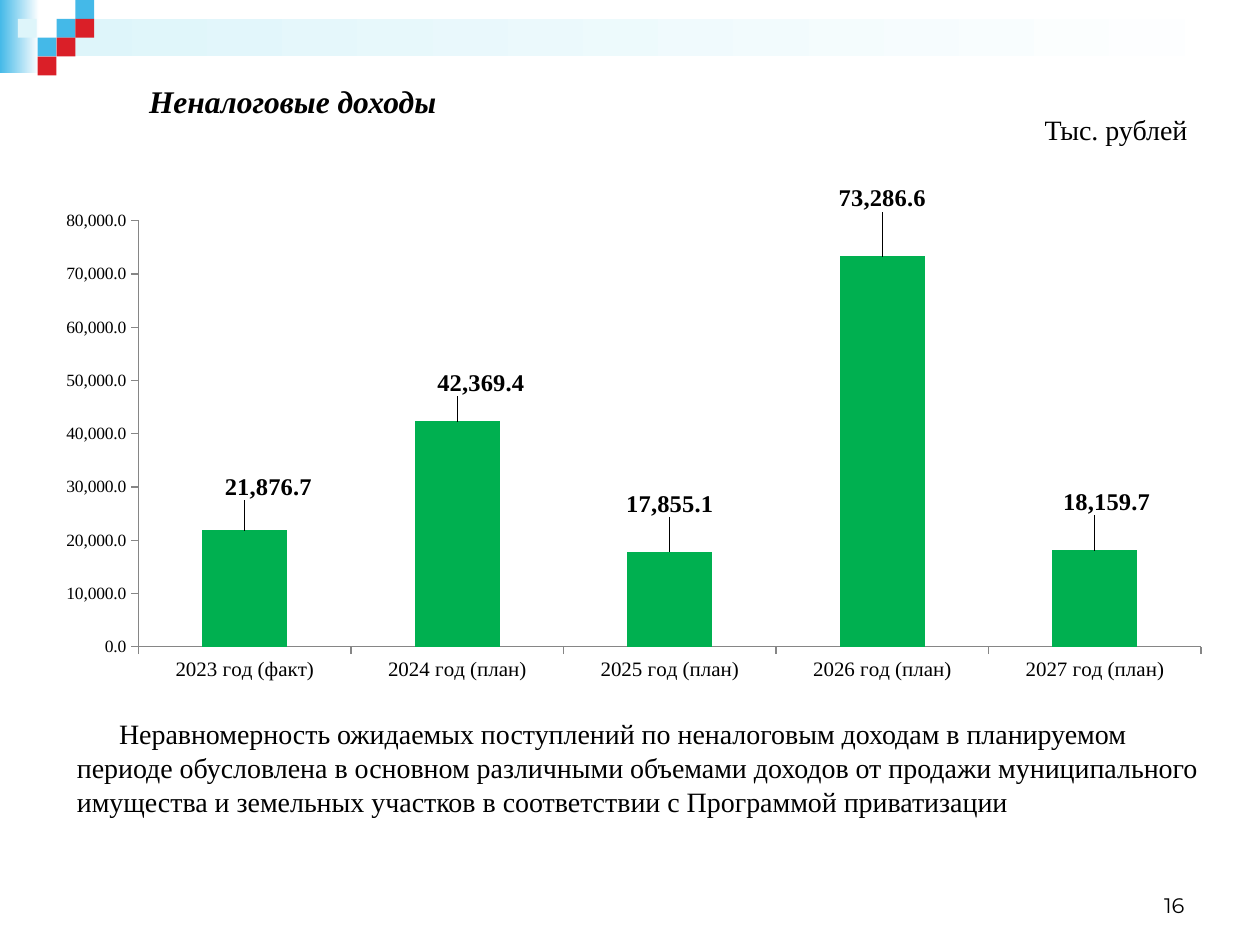
from lxml import etree
from pptx import Presentation
from pptx.chart.data import CategoryChartData
from pptx.dml.color import RGBColor
from pptx.enum.chart import XL_CHART_TYPE as CT, XL_LABEL_POSITION as LP, XL_TICK_MARK as TM
from pptx.enum.shapes import MSO_SHAPE
from pptx.enum.text import MSO_ANCHOR as MA, PP_ALIGN as AL
from pptx.oxml.ns import qn
from pptx.util import Cm, Pt

SERIF = "Times New Roman"
BLUE, RED, PALE, GREEN = "44B9E8", "DA1F28", "DEF5FA", "00B050"


def rgb(value):
    return RGBColor.from_string(value)


def write(sp, text, box, size=16, font=SERIF, bold=False, italic=False,
          align=AL.LEFT, anchor=MA.TOP, indent=None):
    sp.left, sp.top, sp.width, sp.height = [Cm(v) for v in box]
    tf = sp.text_frame
    tf.word_wrap = True
    tf.vertical_anchor = anchor
    p = tf.paragraphs[0]
    p.alignment = align
    if indent:
        p._p.get_or_add_pPr().set("indent", str(Cm(indent)))
    r = p.add_run()
    r.text = text
    f = r.font
    f.size, f.name, f.bold, f.italic = Pt(size), font, bold, italic
    f.color.rgb = rgb("000000")


prs = Presentation()
prs.slide_width, prs.slide_height = Cm(25.4), Cm(19.05)
s = prs.slides.add_slide(prs.slide_layouts[5])

# Header bands (gradient) and mosaic squares
u = 0.38
rects = [
    (0, 0, 0.79, 1.47, (BLUE, "FFFFFF")),
    (3 * u, u, 24.26, 2 * u, (PALE, "FFFFFF")),
]
squares = [(3, 1, BLUE), (4, 0, BLUE), (4, 1, RED), (2, 2, BLUE),
           (0.95, 1, PALE), (3, 2, RED), (2, 3, RED)]
rects += [(col * u, row * u, u, u, (color,)) for col, row, color in squares]
for x, y, w, h, colors in rects:
    sp = s.shapes.add_shape(MSO_SHAPE.RECTANGLE, Cm(x), Cm(y), Cm(w), Cm(h))
    sp.shadow.inherit = False
    sp.line.fill.background()
    if len(colors) == 1:
        sp.fill.solid()
        sp.fill.fore_color.rgb = rgb(colors[0])
    else:
        sp.fill.gradient()
        sp.fill.gradient_angle = 0
        for stop, color in zip(sp.fill.gradient_stops, colors):
            stop.color.rgb = rgb(color)

# Title and unit
write(s.shapes.title, "Неналоговые доходы", (0.5, 1.53, 10.8, 1.03),
      size=18, bold=True, italic=True, align=AL.CENTER)
write(s.shapes.add_textbox(0, 0, 0, 0), "Тыс. рублей", (20.3, 2.14, 4.4, 0.94),
      align=AL.CENTER)

# Column chart
data = CategoryChartData(number_format="#,##0.0")
data.categories = ["2023 год (факт)"] + [f"{year} год (план)" for year in range(2024, 2028)]
data.add_series("Неналоговые доходы", (21876.7, 42369.4, 17855.1, 73286.6, 18159.7))
chart = s.shapes.add_chart(CT.COLUMN_CLUSTERED, Cm(0.89), Cm(3.73), Cm(23.8),
                           Cm(10.21), data).chart
chart.has_legend = chart.has_title = False
chart.font.size, chart.font.name = Pt(10), SERIF
chart.font.color.rgb = rgb("000000")

for axis, size in ((chart.category_axis, 12), (chart.value_axis, 10)):
    axis.major_tick_mark, axis.minor_tick_mark = TM.OUTSIDE, TM.NONE
    axis.tick_labels.font.size = Pt(size)
    axis.tick_labels.font.name = SERIF
    axis.format.line.color.rgb = rgb("868686")
    axis.format.line.width = Pt(0.75)
va = chart.value_axis
va.minimum_scale, va.maximum_scale, va.major_unit = 0, 80000, 10000
va.tick_labels.number_format = "#,##0.0"
va.tick_labels.number_format_is_linked = False
va.major_gridlines.format.line.color.rgb = rgb("FFFFFF")
va.major_gridlines.format.line.width = Pt(0.75)

plot = chart.plots[0]
plot.gap_width, plot.vary_by_categories = 150, False
series = plot.series[0]
series.format.fill.solid()
series.format.fill.fore_color.rgb = rgb(GREEN)
labels = series.data_labels
labels.show_value = True
labels.number_format, labels.number_format_is_linked = "#,##0.0", False
for i in range(5):
    label = series.points[i].data_label
    label.position = LP.OUTSIDE_END
    label.font.size, label.font.name, label.font.bold = Pt(14), SERIF, True
    label.font.color.rgb = rgb("000000")

# Manual layout of the plot area and of each raised label
offsets = [(0.02, -0.05), (0.02, -0.04), (0, -0.06), (0, -0.08), (0.01, -0.06)]
layouts = [({"x": x, "y": y}, dlbl.find(qn("c:idx")))
           for (x, y), dlbl in zip(offsets, series._element.iter(qn("c:dLbl")))]
for values, before in layouts:
    layout = etree.Element(qn("c:layout"))
    manual = etree.SubElement(layout, qn("c:manualLayout"))
    for key, value in values.items():
        etree.SubElement(manual, qn("c:" + key)).set("val", str(value))
    before.addnext(layout)

area = next(chart._chartSpace.iter(qn("c:plotArea")))
for old in area.findall(qn("c:layout")):
    area.remove(old)
layout = etree.Element(qn("c:layout"))
manual = etree.SubElement(layout, qn("c:manualLayout"))
for key, value in (("layoutTarget", "inner"), ("xMode", "edge"), ("yMode", "edge"),
                   ("x", 0.08), ("y", 0.05), ("w", 0.9), ("h", 0.86)):
    etree.SubElement(manual, qn("c:" + key)).set("val", str(value))
area.insert(0, layout)

# Comment and page number
write(s.shapes.add_textbox(0, 0, 0, 0),
      "Неравномерность ожидаемых поступлений по неналоговым доходам в планируемом "
      "периоде обусловлена в основном различными объемами доходов от продажи "
      "муниципального имущества и земельных участков в соответствии с Программой "
      "приватизации", (1.3, 14.33, 23.2, 3), indent=0.85)
write(s.shapes.add_textbox(0, 0, 0, 0), "16", (18.21, 17.35, 5.92, 1.27),
      size=12, font="Montserrat", align=AL.RIGHT, anchor=MA.BOTTOM)

prs.save("out.pptx")
